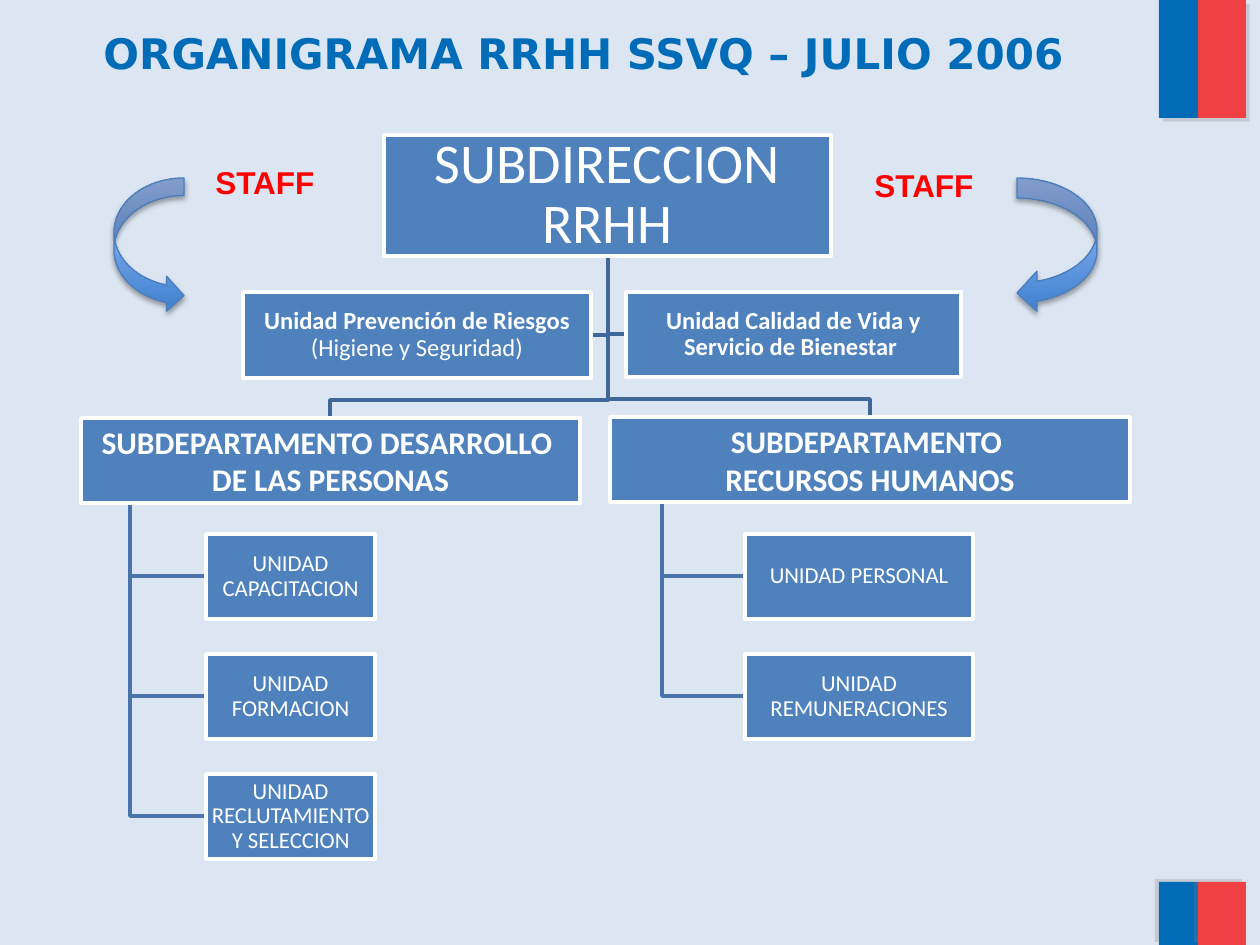
"""Builds the human resources organisation chart slide."""
from lxml.etree import SubElement
from pptx import Presentation
from pptx.dml.color import RGBColor
from pptx.enum.shapes import MSO_SHAPE as Preset
from pptx.enum.text import MSO_ANCHOR as Anchor, MSO_AUTO_SIZE as AutoSize, PP_ALIGN as Align
from pptx.oxml.ns import qn
from pptx.util import Pt

SCALE = 914400 / 126
COLORS = {
    "background": "DCE6F2", "blue": "006CB7", "red": "EF4144", "box": "4F81BD",
    "white": "FFFFFF", "trunk": "3F6797", "branch": "4875AC", "staff": "FF0000",
    "arrow_line": "4B7EBC", "arrow_bottom": "3F80CE", "arrow_top": "A4C4FF",
    "flag_shadow": "808080", "arrow_shadow": "000000",
}

TITLE = "ORGANIGRAMA RRHH SSVQ – JULIO 2006"
ROOT = {"text": "SUBDIRECCION RRHH", "box": (384, 135, 447, 121)}
STAFF_UNITS = [
    {"text": "Unidad Prevención de Riesgos", "tail": " (Higiene y Seguridad)",
     "box": (243, 292, 348, 86)},
    {"text": "Unidad Calidad de Vida y Servicio de Bienestar ", "tail": "",
     "box": (626, 292, 335, 85)},
]
DEPARTMENTS = [
    {"text": "SUBDEPARTAMENTO DESARROLLO \nDE LAS PERSONAS", "box": (81, 418, 499, 85),
     "unit_left": 206, "unit_width": 169,
     "units": ["UNIDAD CAPACITACION", "UNIDAD FORMACION", "UNIDAD RECLUTAMIENTO Y SELECCION"]},
    {"text": "SUBDEPARTAMENTO \nRECURSOS HUMANOS", "box": (610, 417, 520, 85),
     "unit_left": 745, "unit_width": 228,
     "units": ["UNIDAD PERSONAL", "UNIDAD REMUNERACIONES"]},
]
UNIT_TOP, UNIT_STEP, UNIT_HEIGHT = 534, 120, 85
ELBOW_RISE = 18
FLAG_COLUMNS = [("blue", 1159, 39), ("red", 1198, 48)]
FLAG_ROWS = [(0, 118, 45), (882, 63, 215)]
STAFF_LABELS = [(862, 160, 128, 50), (203, 157, 128, 50)]
ARROWS = [
    (Preset.CURVED_RIGHT_ARROW, (114, 178, 70, 135)),
    (Preset.CURVED_LEFT_ARROW, (1017, 178, 80, 135)),
]


def emu(pixels):
    return round(pixels * SCALE)


def rgb(name):
    return RGBColor.from_string(COLORS[name])


def write(frame, text, size, font="Calibri", color="white", bold=False, tail="",
          align=Align.CENTER, anchor=Anchor.MIDDLE, inset=None, spacing=None):
    frame.word_wrap = True
    frame.vertical_anchor = anchor
    if inset is not None:
        frame.margin_left = frame.margin_right = emu(inset)
        frame.margin_top = frame.margin_bottom = emu(inset)
    for index, line in enumerate(text.split("\n")):
        paragraph = frame.add_paragraph() if index else frame.paragraphs[0]
        paragraph.alignment = align
        if spacing:
            paragraph.line_spacing = spacing
        for content, weight in ((line, bold), (tail, False)):
            if content:
                run = paragraph.add_run()
                run.text = content
                run.font.size, run.font.name, run.font.bold = Pt(size), font, weight
                run.font.color.rgb = rgb(color)


def add_shape(slide, preset, box, fill=None, line=None, line_width=2):
    shape = slide.shapes.add_shape(preset, *map(emu, box))
    shape.shadow.inherit = False
    if fill:
        shape.fill.solid()
        shape.fill.fore_color.rgb = rgb(fill)
    if line:
        shape.line.color.rgb = rgb(line)
        shape.line.width = Pt(line_width)
    else:
        shape.line.fill.background()
    return shape


def add_shadow(shape, color, alpha, blur, distance, angle):
    effects = shape._element.spPr.find(qn("a:effectLst"))
    shadow = SubElement(effects, qn("a:outerShdw"), blurRad=str(Pt(blur)), dist=str(Pt(distance)),
                        dir=str(angle * 60000), algn="ctr", rotWithShape="0")
    tint = SubElement(shadow, qn("a:srgbClr"), val=COLORS[color])
    SubElement(tint, qn("a:alpha"), val=str(alpha * 1000))


def add_elbow(slide, points, color):
    builder = slide.shapes.build_freeform(*points[0], scale=SCALE)
    builder.add_line_segments(points[1:], close=False)
    shape = builder.convert_to_shape()
    shape.shadow.inherit = False
    shape.fill.background()
    shape.line.color.rgb = rgb(color)
    shape.line.width = Pt(2)


def add_box(slide, box, text, size, **style):
    shape = add_shape(slide, Preset.RECTANGLE, box, "box", "white")
    write(shape.text_frame, text, size, **style)


def unit_boxes(department):
    return [(department["unit_left"], UNIT_TOP + index * UNIT_STEP,
             department["unit_width"], UNIT_HEIGHT)
            for index in range(len(department["units"]))]


def draw_links(slide):
    left, top, width, height = ROOT["box"]
    center, bottom = left + width // 2 + 1, top + height
    for unit in STAFF_UNITS:
        x, y, w, h = unit["box"]
        side, middle = (x if x > center else x + w), y + h // 2
        add_elbow(slide, [(center, bottom), (center, middle), (side, middle)], "trunk")
    for department in DEPARTMENTS:
        x, y, w, h = department["box"]
        target, bend = x + w // 2, y - ELBOW_RISE
        add_elbow(slide, [(center, bottom), (center, bend), (target, bend), (target, y)], "trunk")
        stem = x + w // 10
        for unit_x, unit_y, _, unit_h in unit_boxes(department):
            middle = unit_y + unit_h // 2
            add_elbow(slide, [(stem, y + h), (stem, middle), (unit_x, middle)], "branch")


def draw_boxes(slide):
    add_box(slide, ROOT["box"], ROOT["text"], 32, inset=3, spacing=0.9)
    for department in DEPARTMENTS:
        add_box(slide, department["box"], department["text"], 18, bold=True, inset=1)
        for box, text in zip(unit_boxes(department), department["units"]):
            add_box(slide, box, text, 13, inset=1, spacing=0.9)
    for unit in STAFF_UNITS:
        add_box(slide, unit["box"], unit["text"], 14, bold=True, tail=unit["tail"],
                inset=1, spacing=0.9)


def draw_flags(slide):
    for top, height, angle in FLAG_ROWS:
        for color, left, width in FLAG_COLUMNS:
            band = add_shape(slide, Preset.RECTANGLE, (left, top, width, height), color)
            add_shadow(band, "flag_shadow", 25, 0, 3, angle)


def draw_staff(slide):
    for preset, box in ARROWS:
        arrow = add_shape(slide, preset, box, line="arrow_line", line_width=0.75)
        arrow.fill.gradient()
        arrow.fill.gradient_angle = 90
        for stop, color in zip(arrow.fill.gradient_stops, ("arrow_bottom", "arrow_top")):
            stop.color.rgb = rgb(color)
        add_shadow(arrow, "arrow_shadow", 35, 3.1, 1.8, 90)
    for box in STAFF_LABELS:
        label = slide.shapes.add_textbox(*map(emu, box))
        write(label.text_frame, "STAFF", 18, font="Arial", color="staff", bold=True,
              align=Align.LEFT, anchor=Anchor.TOP)
        label.text_frame.auto_size = AutoSize.SHAPE_TO_FIT_TEXT


def main():
    presentation = Presentation()
    presentation.slide_width, presentation.slide_height = emu(1260), emu(945)
    slide = presentation.slides.add_slide(presentation.slide_layouts[5])
    slide.background.fill.solid()
    slide.background.fill.fore_color.rgb = rgb("background")
    title = slide.shapes.title
    title.left, title.top, title.width, title.height = map(emu, (21, 21, 1125, 158))
    write(title.text_frame, TITLE, 24, font="DejaVu Sans", color="blue", bold=True,
          anchor=Anchor.TOP)
    draw_flags(slide)
    draw_links(slide)
    draw_boxes(slide)
    draw_staff(slide)
    presentation.save("out.pptx")


if __name__ == "__main__":
    main()
